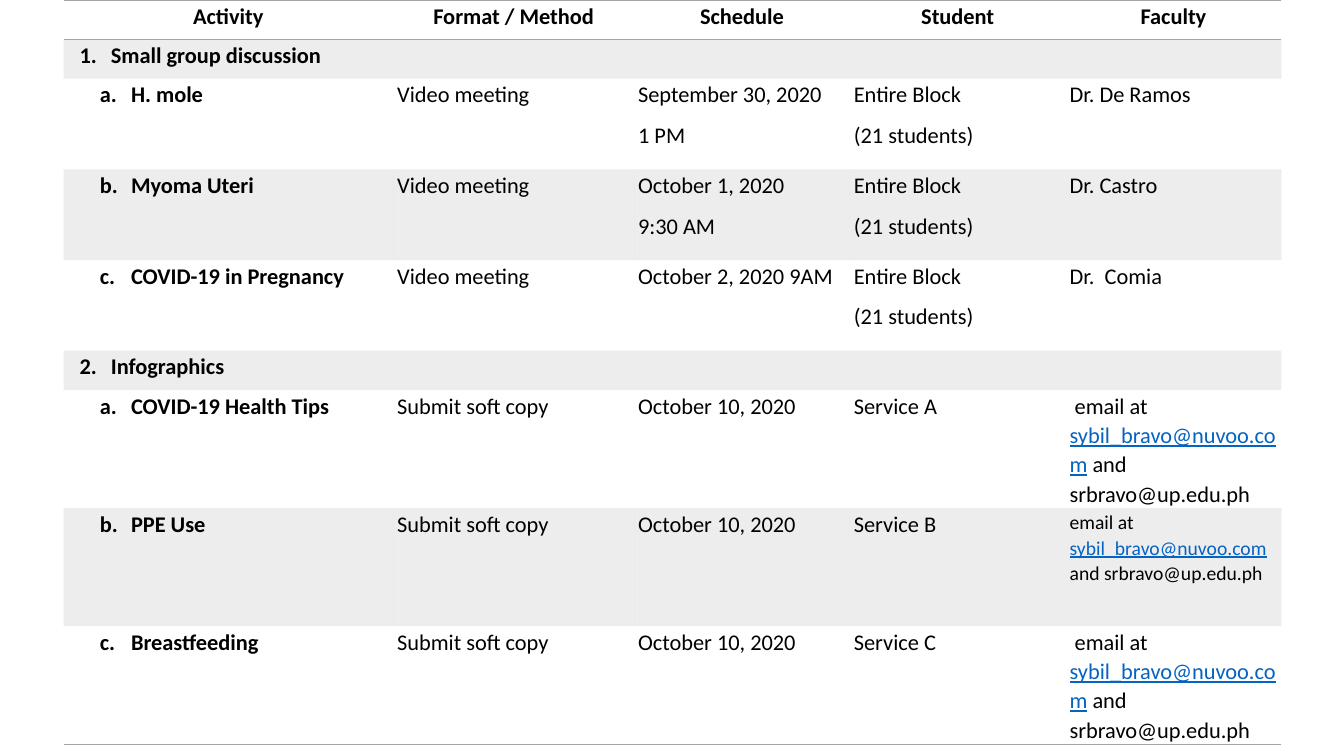
from dataclasses import dataclass

from lxml import etree
from pptx import Presentation
from pptx.dml.color import RGBColor
from pptx.enum.text import PP_ALIGN
from pptx.oxml.ns import qn
from pptx.util import Inches, Pt

CENTER, LEFT = PP_ALIGN.CENTER, PP_ALIGN.LEFT
COLORS = {"text": "000000", "link": "0563C1", "gray": "A5A5A5"}
FONT = "Calibri"
BAND_OPACITY = 20
NO_STYLE = "{2D5ABB26-0587-4C30-8999-92F81FD0307C}"
COL_WIDTHS = [3.27, 2.39, 2.14, 2.14, 2.14]
HANGING = 0.31  # gap between a list marker and its text

HEADINGS = ["Activity", "Format / Method", "Schedule", "Student", "Faculty"]
MEETING, SOFT_COPY = "Video meeting", "Submit soft copy"
BLOCK = "Entire Block\n(21 students)"
DEADLINE = "October 10, 2020"
LINK = "sybil_bravo@nuvoo.com"
EMAIL = f"email at {LINK} and srbravo@up.edu.ph"


@dataclass
class Row:
    cells: list[str]  # line breaks separate paragraphs
    height: float
    indent: float = 0.32
    banded: bool = False
    faculty_size: int = 16


def section(title: str) -> Row:
    return Row([title], 0.39, indent=0.12, banded=True)


ROWS = [
    Row(HEADINGS, 0.39, indent=0),
    section("1.\tSmall group discussion"),
    Row(["a.\tH. mole", MEETING, "September 30, 2020\n1 PM", BLOCK, "Dr. De Ramos"], 0.9),
    Row(["b.\tMyoma Uteri", MEETING, "October 1, 2020\n9:30 AM", BLOCK, "Dr. Castro"], 0.9,
        banded=True),
    Row(["c.\tCOVID-19 in Pregnancy", MEETING, "October 2, 2020 9AM", BLOCK, "Dr.  Comia"], 0.9),
    section("2.\tInfographics"),
    Row(["a.\tCOVID-19 Health Tips", SOFT_COPY, DEADLINE, "Service A", " " + EMAIL], 1.17),
    Row(["b.\tPPE Use", SOFT_COPY, DEADLINE, "Service B", EMAIL], 1.17,
        banded=True, faculty_size=14),
    Row(["c.\tBreastfeeding", SOFT_COPY, DEADLINE, "Service C", " " + EMAIL], 1.17),
]


def add_run(p, text: str, size: int, bold: bool) -> None:
    is_link = text == LINK
    r = p.add_run()
    r.text = text
    r.font.name, r.font.size, r.font.bold = FONT, Pt(size), bold
    r.font.underline = is_link
    r.font.color.rgb = RGBColor.from_string(COLORS["link" if is_link else "text"])


def write_cell(cell, text: str, size: int, bold: bool, align, indent: float) -> None:
    cell.margin_left = cell.margin_right = Inches(0.04)
    cell.margin_top, cell.margin_bottom = Inches(0.01), 0
    tf = cell.text_frame
    for i, line in enumerate(text.split("\n")):
        p = tf.add_paragraph() if i else tf.paragraphs[0]
        p.alignment, p.line_spacing, p.space_after = align, 1.07, Pt(8)
        if indent:
            pPr = p._p.get_or_add_pPr()
            pPr.set("marL", str(Inches(indent + HANGING)))
            pPr.set("indent", str(-Inches(HANGING)))
        before, link, after = line.partition(LINK)
        for part in filter(None, (before, link, after)):
            add_run(p, part, size, bold)


def fill_cell(cell, banded: bool) -> None:
    if not banded:
        cell.fill.background()
        return
    cell.fill.solid()
    cell.fill.fore_color.rgb = RGBColor.from_string(COLORS["gray"])
    color = cell._tc.tcPr.find(qn("a:solidFill"))[0]
    etree.SubElement(color, qn("a:alpha")).set("val", str(BAND_OPACITY * 1000))


def add_borders(cell, sides: list[str]) -> None:
    for i, side in enumerate(sides):
        ln = etree.Element(qn(f"a:ln{side}"), w=str(Pt(1)))
        fill = etree.SubElement(ln, qn("a:solidFill"))
        etree.SubElement(fill, qn("a:srgbClr")).set("val", COLORS["gray"])
        cell._tc.get_or_add_tcPr().insert(i, ln)


def add_schedule(s) -> None:
    height = sum(row.height for row in ROWS)
    frame = s.shapes.add_table(len(ROWS), len(COL_WIDTHS), Inches(0.63), 0,
                               Inches(sum(COL_WIDTHS)), Inches(height))
    table = frame.table
    table.first_row = table.horz_banding = False
    table._tbl.tblPr.find(qn("a:tableStyleId")).text = NO_STYLE
    for column, width in zip(table.columns, COL_WIDTHS):
        column.width = Inches(width)

    last = len(ROWS) - 1
    for i, row in enumerate(ROWS):
        table.rows[i].height = Inches(row.height)
        sides = {0: ["T", "B"], last: ["B"]}.get(i, [])
        for j in range(len(COL_WIDTHS)):
            cell = table.cell(i, j)
            fill_cell(cell, row.banded)
            add_borders(cell, sides)
            if j < len(row.cells):
                size = row.faculty_size if j == len(COL_WIDTHS) - 1 else 16
                write_cell(cell, row.cells[j], size, bold=i == 0 or j == 0,
                           align=LEFT if i else CENTER, indent=0 if j else row.indent)
        # Section rows span the whole table
        if len(row.cells) == 1:
            table.cell(i, 0).merge(table.cell(i, len(COL_WIDTHS) - 1))


def main() -> None:
    prs = Presentation()
    prs.slide_width, prs.slide_height = Inches(13.33), Inches(7.5)
    s = prs.slides.add_slide(prs.slide_layouts[6])
    add_schedule(s)
    prs.save("out.pptx")


if __name__ == "__main__":
    main()
